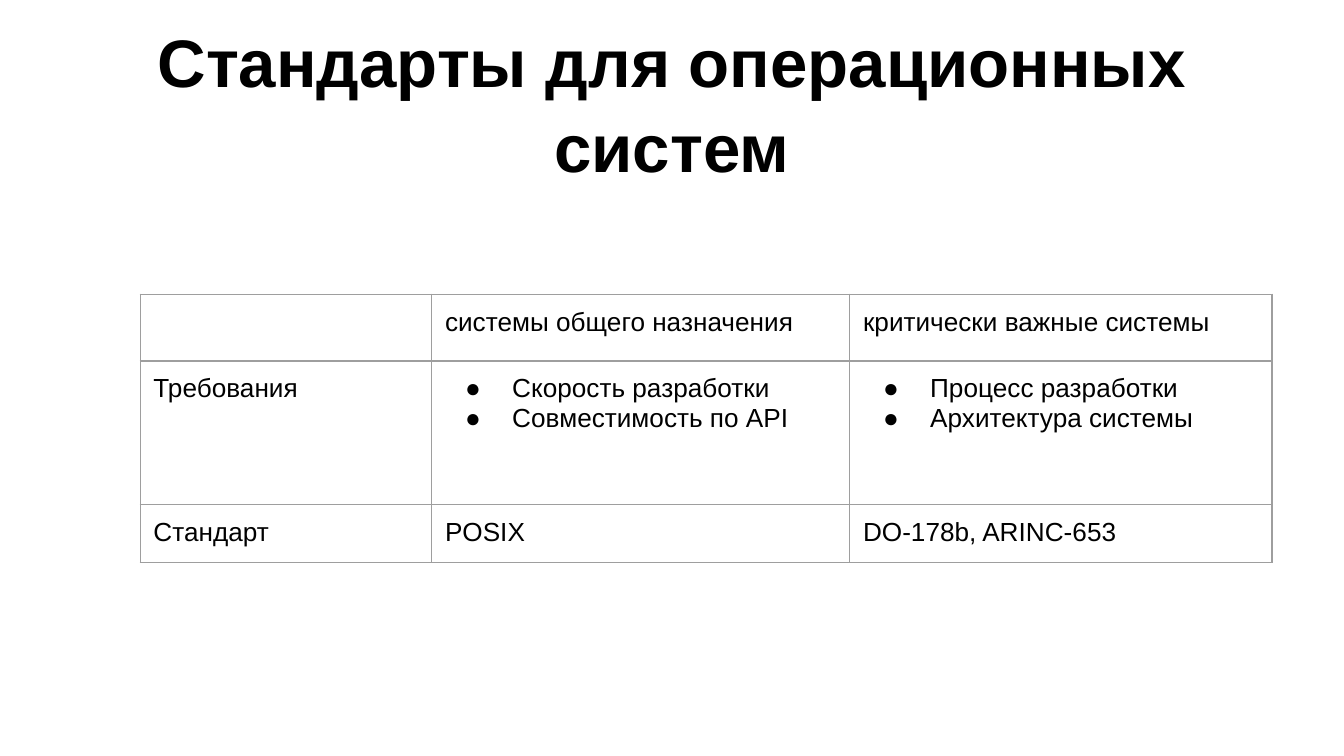
from lxml.etree import SubElement
from pptx import Presentation
from pptx.dml.color import RGBColor
from pptx.enum.text import MSO_ANCHOR, PP_ALIGN
from pptx.oxml.ns import qn
from pptx.util import Cm, Pt

FONT = "Arial"
BLACK = "000000"
BORDER = "9E9E9E"
INSET = Cm(0.25)
COLUMN_WIDTHS = [5.51, 7.9, 7.98]
ROW_HEIGHTS = [1.21, 2.72, 1.07]
ROWS = [
    ["", "системы общего назначения", "критически важные системы"],
    ["Требования",
     ["Скорость разработки", "Совместимость по API"],
     ["Процесс разработки", "Архитектура системы"]],
    ["Стандарт", "POSIX", "DO-178b, ARINC-653"],
]


def color(value):
    return RGBColor.from_string(value)


def set_font(paragraph, size, bold=False):
    font = paragraph.font
    font.name = FONT
    font.size = Pt(size)
    font.bold = bold
    font.color.rgb = color(BLACK)


def set_margins(target):
    target.margin_left = target.margin_right = INSET
    target.margin_top = target.margin_bottom = INSET


def add_title(slide, text):
    shape = slide.shapes.add_textbox(Cm(1.27), Cm(0.79), Cm(22.86), Cm(2.97))
    frame = shape.text_frame
    frame.word_wrap = True
    frame.vertical_anchor = MSO_ANCHOR.BOTTOM
    set_margins(frame)
    paragraph = frame.paragraphs[0]
    paragraph.text = text
    paragraph.alignment = PP_ALIGN.CENTER
    paragraph.line_spacing = 1.05
    set_font(paragraph, 36, bold=True)


def add_bullet(paragraph):
    properties = paragraph._p.get_or_add_pPr()
    properties.set("marL", str(Cm(1.27)))
    properties.set("indent", str(-Cm(0.89)))
    bullet_color = SubElement(properties, qn("a:buClr"))
    SubElement(bullet_color, qn("a:srgbClr"), val=BLACK)
    SubElement(properties, qn("a:buFont"), typeface=FONT)
    SubElement(properties, qn("a:buChar"), char="●")


def add_borders(cell):
    properties = cell._tc.get_or_add_tcPr()
    for side in ("L", "R", "T", "B"):
        line = SubElement(properties, qn(f"a:ln{side}"), w=str(Pt(0.75)))
        fill = SubElement(line, qn("a:solidFill"))
        SubElement(fill, qn("a:srgbClr"), val=BORDER)


def fill_cell(cell, content):
    set_margins(cell)
    add_borders(cell)
    cell.fill.background()
    if not content:
        return
    is_list = isinstance(content, list)
    cell.text = "\n".join(content) if is_list else content
    for paragraph in cell.text_frame.paragraphs:
        set_font(paragraph, 14)
        if is_list:
            add_bullet(paragraph)


def add_standards_table(slide):
    shape = slide.shapes.add_table(
        len(ROWS), len(COLUMN_WIDTHS), Cm(2.65), Cm(5.56),
        Cm(sum(COLUMN_WIDTHS)), Cm(sum(ROW_HEIGHTS)))
    table = shape.table
    table.first_row = False
    table.horz_banding = False
    for column, width in zip(table.columns, COLUMN_WIDTHS):
        column.width = Cm(width)
    for row, height, contents in zip(table.rows, ROW_HEIGHTS, ROWS):
        row.height = Cm(height)
        for cell, content in zip(row.cells, contents):
            fill_cell(cell, content)


def main():
    presentation = Presentation()
    presentation.slide_width = Cm(25.4)
    presentation.slide_height = Cm(14.29)
    slide = presentation.slides.add_slide(presentation.slide_layouts[6])
    add_title(slide, "Стандарты для операционных систем")
    add_standards_table(slide)
    presentation.save("out.pptx")


if __name__ == "__main__":
    main()
